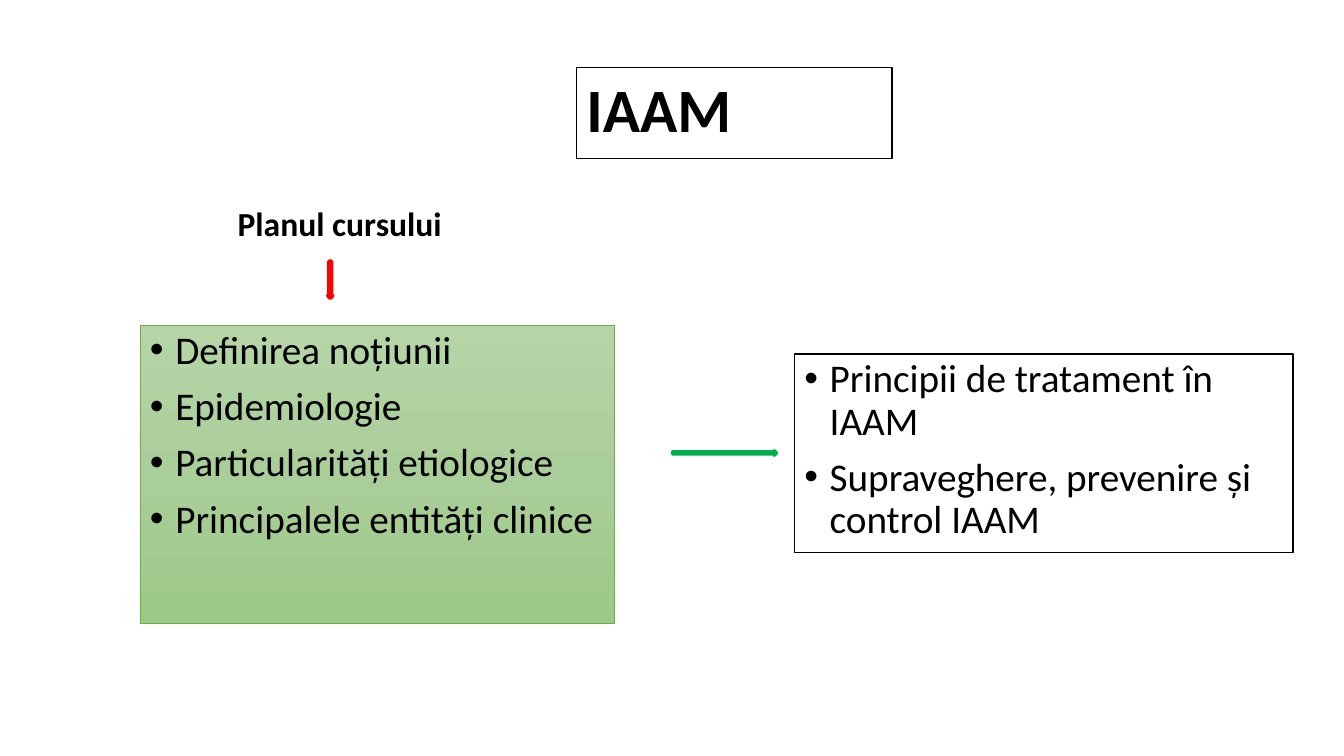
from copy import deepcopy

from lxml.etree import SubElement
from pptx import Presentation
from pptx.dml.color import RGBColor
from pptx.enum.shapes import MSO_SHAPE as Preset
from pptx.enum.text import MSO_ANCHOR as Anchor, PP_ALIGN as Align
from pptx.oxml.ns import qn
from pptx.util import Cm, Pt

BLACK, WHITE = "000000", "FFFFFF"
GREEN_SHADES = ["B5D5A7", "AACE9A", "9CC987"]

COURSE_PLAN = [
    "Definirea noțiunii",
    "Epidemiologie",
    "Particularități etiologice",
    "Principalele entități clinice",
]
TREATMENT = [
    "Principii de tratament în IAAM",
    "Supraveghere, prevenire și control IAAM",
]


def color(hex_value):
    return RGBColor.from_string(hex_value)


def apply_format(target, values):
    for name, value in values.items():
        setattr(target, name, value)


def fill_gradient(shape, shades):
    """Vertical gradient with three evenly spaced stops."""
    shape.fill.gradient()
    shape.fill.gradient_angle = 270
    first = shape.element.spPr.find(".//" + qn("a:gs"))
    middle = deepcopy(first)
    middle.set("pos", "50000")
    first.addnext(middle)
    for stop, shade in zip(shape.fill.gradient_stops, shades):
        stop.color.rgb = color(shade)


def add_outlined(slide, preset, place, fill, line, width):
    shape = slide.shapes.add_shape(preset, *map(Cm, place))
    shape.shadow.inherit = False
    if isinstance(fill, list):
        fill_gradient(shape, fill)
    else:
        shape.fill.solid()
        shape.fill.fore_color.rgb = color(fill)
    shape.line.color.rgb = color(line)
    shape.line.width = Pt(width)
    return shape


def add_bullet(paragraph):
    properties = paragraph._p.get_or_add_pPr()
    properties.set("marL", str(Cm(0.64)))
    properties.set("indent", str(-Cm(0.64)))
    SubElement(properties, qn("a:buFont"), typeface="Arial")
    SubElement(properties, qn("a:buChar"), char="•")


def write(shape, lines, size, bold=False, anchor=Anchor.TOP, before=10, bullets=False):
    frame = shape.text_frame
    apply_format(frame, {"word_wrap": True, "vertical_anchor": anchor})
    for index, line in enumerate(lines):
        paragraph = frame.add_paragraph() if index else frame.paragraphs[0]
        apply_format(paragraph, {
            "alignment": Align.LEFT,
            "line_spacing": 0.9,
            "space_before": Pt(before),
        })
        if bullets:
            add_bullet(paragraph)
        run = paragraph.add_run()
        run.text = line
        apply_format(run.font, {"name": "Calibri", "size": Pt(size), "bold": bold})
        run.font.color.rgb = color(BLACK)


def main():
    deck = Presentation()
    apply_format(deck, {"slide_width": Cm(33.87), "slide_height": Cm(19.05)})
    slide = deck.slides.add_slide(deck.slide_layouts[6])

    # Title and heading
    title = add_outlined(slide, Preset.RECTANGLE, (14.53, 1.7, 7.95, 2.29), WHITE, BLACK, 1)
    write(title, ["IAAM"], 44, bold=True, anchor=Anchor.MIDDLE, before=0)
    heading = slide.shapes.add_textbox(*map(Cm, (5.74, 4.5, 6.3, 1.78)))
    write(heading, ["Planul cursului"], 24, bold=True, anchor=Anchor.BOTTOM)

    # Topic lists
    plan = add_outlined(slide, Preset.RECTANGLE, (3.53, 8.2, 11.96, 7.52),
                        GREEN_SHADES, "70AD47", 0.5)
    write(plan, COURSE_PLAN, 28, bullets=True)
    treatment = add_outlined(slide, Preset.RECTANGLE, (20.02, 8.92, 12.57, 5),
                             WHITE, BLACK, 1)
    write(treatment, TREATMENT, 28, bullets=True)

    # Arrows from heading to plan and from plan to treatment
    add_outlined(slide, Preset.DOWN_ARROW, (8.26, 6.58, 0.13, 0.94), "4472C4", "FF0000", 2.5)
    add_outlined(slide, Preset.RIGHT_ARROW, (16.94, 11.35, 2.64, 0.13), "4472C4", "00B050", 2)

    deck.save("out.pptx")


if __name__ == "__main__":
    main()
